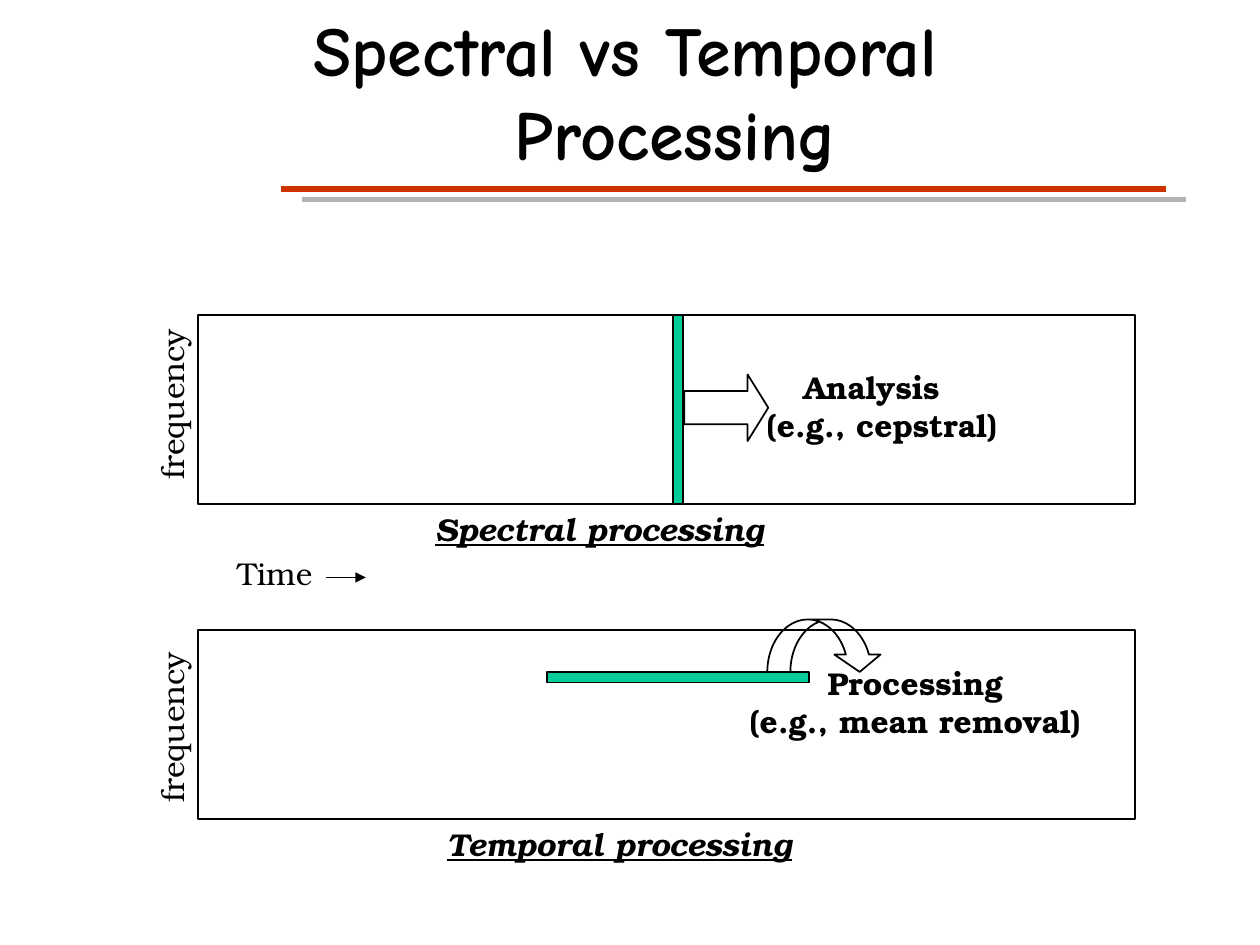
from pptx import Presentation
from pptx.dml.color import RGBColor
from pptx.enum.shapes import MSO_CONNECTOR, MSO_SHAPE
from pptx.enum.text import MSO_ANCHOR, PP_ALIGN
from pptx.oxml.ns import qn
from pptx.util import Pt
from lxml.etree import SubElement

BLACK = RGBColor(0x00, 0x00, 0x00)
GREEN = RGBColor(0x00, 0xCC, 0x99)
RED = RGBColor(0xCC, 0x33, 0x00)
GRAY = RGBColor(0xB2, 0xB2, 0xB2)
SERIF = "TeX Gyre Bonum"
COMIC = "Comic Neue"


def add_text(slide, box, text, font=SERIF, size=18, bold=False, slant=False,
             align=PP_ALIGN.CENTER, anchor=MSO_ANCHOR.MIDDLE, turn=0, indent=0):
    """Add a text box; slant gives underlined italics, indent moves later lines."""
    shape = slide.shapes.add_textbox(*map(Pt, box))
    shape.rotation = turn
    frame = shape.text_frame
    frame.text = text
    frame.word_wrap = True
    frame.margin_left = frame.margin_right = 0
    frame.vertical_anchor = anchor
    for row, para in enumerate(frame.paragraphs):
        para.alignment = align
        if row and indent:
            para._p.get_or_add_pPr().set("marL", str(Pt(indent)))
        for run in para.runs:
            face = run.font
            face.name, face.size = font, Pt(size)
            face.bold, face.italic, face.underline = bold, slant, slant
            face.color.rgb = BLACK


def add_form(slide, kind, box, fill=None, adjust=()):
    shape = slide.shapes.add_shape(kind, *map(Pt, box))
    shape.shadow.inherit = False
    if fill is None:
        shape.fill.background()
    else:
        shape.fill.solid()
        shape.fill.fore_color.rgb = fill
    shape.line.color.rgb = BLACK
    shape.line.width = Pt(1)
    for spot, value in enumerate(adjust):
        shape.adjustments[spot] = value


def add_line(slide, left, right, y, color, width, arrow=False):
    line = slide.shapes.add_connector(
        MSO_CONNECTOR.STRAIGHT, Pt(left), Pt(y), Pt(right), Pt(y))
    line.line.color.rgb = color
    line.line.width = Pt(width)
    if arrow:
        SubElement(line.line._get_or_add_ln(), qn("a:tailEnd"), type="triangle")
    SubElement(line._element.spPr, qn("a:effectLst"))


def add_panel(slide, top, label, bar):
    """Add a time-frequency frame with its axis label and green bar."""
    add_form(slide, MSO_SHAPE.RECTANGLE, (113, top, 535.5, 108))
    add_form(slide, MSO_SHAPE.RECTANGLE, bar, GREEN)
    add_text(slide, (48.5, label, 100, 29), "frequency", turn=270)


def main():
    deck = Presentation()
    deck.slide_width, deck.slide_height = Pt(720), Pt(540)
    slide = deck.slides.add_slide(deck.slide_layouts[6])

    add_text(slide, (179, 0, 414, 103), "Spectral vs Temporal\nProcessing",
             COMIC, 40, bold=True, align=PP_ALIGN.LEFT,
             anchor=MSO_ANCHOR.TOP, indent=115)
    add_line(slide, 160.5, 666, 108, RED, 3)
    add_line(slide, 172.5, 678, 114, GRAY, 3)

    add_panel(slide, 180, 216.5, (384.5, 180, 6, 108))
    add_panel(slide, 360, 401, (312.5, 384, 150, 6))
    add_form(slide, MSO_SHAPE.CURVED_DOWN_ARROW, (438.5, 354, 66, 30),
             adjust=(0.44, 0.88, 0.33))
    add_form(slide, MSO_SHAPE.RIGHT_ARROW, (391, 214, 48, 38),
             adjust=(0.5, 0.31))

    add_text(slide, (407.5, 206.5, 181, 50.5), "Analysis\n(e.g., cepstral)",
             bold=True, indent=12)
    add_text(slide, (421, 376, 204, 50.5), "Processing\n(e.g., mean removal)",
             bold=True)
    add_text(slide, (241, 288, 203, 29), "Spectral processing",
             bold=True, slant=True)
    add_text(slide, (247.5, 468, 213, 29), "Temporal processing",
             bold=True, slant=True)
    add_text(slide, (129, 313, 56, 29), "Time")
    add_line(slide, 186.5, 209, 330, BLACK, 1, arrow=True)

    deck.save("out.pptx")


if __name__ == "__main__":
    main()
